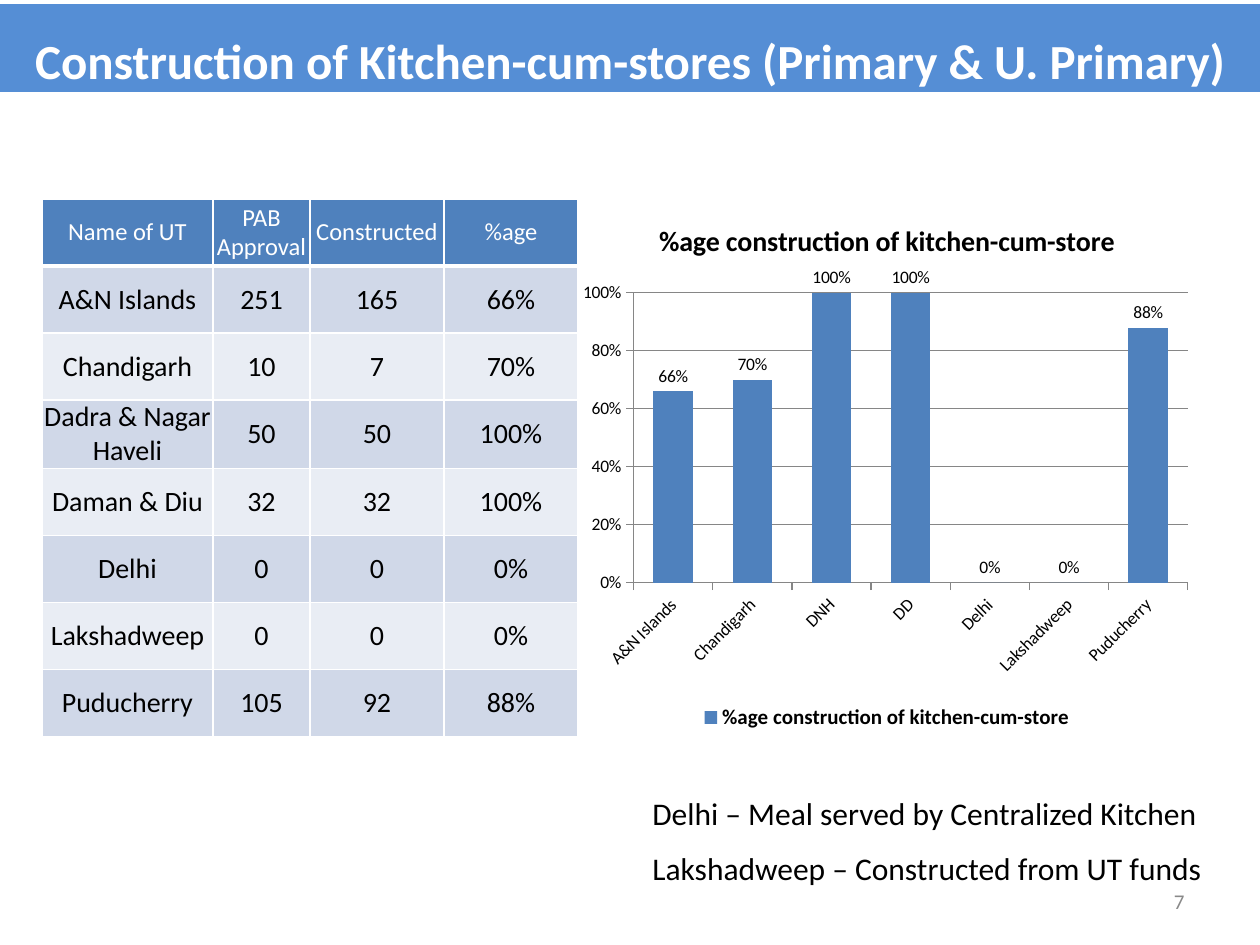
from lxml import etree
from pptx import Presentation
from pptx import util as u
from pptx.chart.data import CategoryChartData
from pptx.dml.color import RGBColor
from pptx.enum import chart as charts, text
from pptx.oxml import parse_xml
from pptx.oxml.ns import nsdecls, qn

SCALE = 914400 / 126  # EMU per px


def px(*lengths):
    return [u.Emu(round(length * SCALE)) for length in lengths]


def style(font, size, color, bold=False):
    font.name, font.size, font.bold = "Calibri", u.Pt(size), bold
    font.color.rgb = RGBColor.from_string(color)


deck = Presentation()
deck.slide_width, deck.slide_height = px(1260, 945)
page = deck.slides.add_slide(deck.slide_layouts[5])

# Title band
title = page.shapes.title
title.left, title.top, title.width, title.height = px(0, 4, 1260, 88)
title.fill.solid()
title.fill.fore_color.rgb = RGBColor.from_string("558ED5")
title.text_frame.text = "Construction of Kitchen-cum-stores (Primary & U. Primary)"
title.text_frame.vertical_anchor = text.MSO_ANCHOR.MIDDLE
title.text_frame.auto_size = text.MSO_AUTO_SIZE.NONE
para = title.text_frame.paragraphs[0]
para.alignment = text.PP_ALIGN.CENTER
para.line_spacing = 1.4
style(para.font, 28, "FFFFFF", True)

# Table of kitchens by territory
rows = [
    ("Name of UT", "PAB Approval", "Constructed", "%age"),
    ("A&N Islands", "251", "165", "66%"),
    ("Chandigarh", "10", "7", "70%"),
    ("Dadra & Nagar Haveli", "50", "50", "100%"),
    ("Daman & Diu", "32", "32", "100%"),
    ("Delhi", "0", "0", "0%"),
    ("Lakshadweep", "0", "0", "0%"),
    ("Puducherry", "105", "92", "88%"),
]
table = page.shapes.add_table(len(rows), 4, *px(42, 199, 536, 536)).table
for column, width in zip(table.columns, px(171, 97, 134, 134)):
    column.width = width
for r, values in enumerate(rows):
    table.rows[r].height = px(67)[0]
    fill = "4F81BD" if r == 0 else ("E9EDF4", "D0D8E8")[r % 2]
    for c, value in enumerate(values):
        cell = table.cell(r, c)
        cell.text = value
        cell.vertical_anchor = text.MSO_ANCHOR.MIDDLE
        cell.margin_left = cell.margin_right = cell.margin_top = cell.margin_bottom = 0
        para = cell.text_frame.paragraphs[0]
        para.alignment = text.PP_ALIGN.CENTER
        style(para.font, 16 if r else 14, "000000" if r else "FFFFFF")
        # White borders, thicker between header and body
        for side in "LRTB":
            thick = (r, side) in ((0, "B"), (1, "T"))
            cell._tc.get_or_add_tcPr().append(parse_xml(
                f'<a:ln{side} {nsdecls("a")} w="{u.Pt(3 if thick else 1)}"><a:solidFill>'
                f'<a:srgbClr val="FFFFFF"/></a:solidFill></a:ln{side}>'))
        cell.fill.solid()
        cell.fill.fore_color.rgb = RGBColor.from_string(fill)

# Column chart
name = "%age construction of kitchen-cum-store"
data = CategoryChartData(number_format="0%")
data.categories = ["A&N Islands", "Chandigarh", "DNH", "DD", "Delhi", "Lakshadweep", "Puducherry"]
data.add_series(name, [0.66, 0.7, 1, 1, 0, 0, 0.88])
chart = page.shapes.add_chart(
    charts.XL_CHART_TYPE.COLUMN_CLUSTERED, *px(567, 199, 640, 536), data).chart
style(chart.font, 10, "000000")
chart.has_title = True
chart.chart_title.text_frame.text = name
style(chart.chart_title.text_frame.paragraphs[0].font, 16, "000000", True)
chart.has_legend = True
chart.legend.position = charts.XL_LEGEND_POSITION.BOTTOM
chart.legend.include_in_layout = False
style(chart.legend.font, 12, "000000", True)

plot = chart.plots[0]
plot.gap_width = 100
plot.vary_by_categories = False
bars = plot.series[0]
bars.format.fill.solid()
bars.format.fill.fore_color.rgb = RGBColor.from_string("4F81BD")
labels = bars.data_labels
labels.show_value = True
labels.number_format, labels.number_format_is_linked = "0%", False
labels.position = charts.XL_LABEL_POSITION.OUTSIDE_END
style(labels.font, 10, "000000")

scale_axis, name_axis = chart.value_axis, chart.category_axis
scale_axis.minimum_scale, scale_axis.maximum_scale, scale_axis.major_unit = 0, 1, 0.2
scale_axis.has_major_gridlines = True
scale_axis.tick_labels.number_format = "0%"
scale_axis.tick_labels.number_format_is_linked = False
for axis in (scale_axis, name_axis):
    axis.major_tick_mark = charts.XL_TICK_MARK.OUTSIDE
    style(axis.tick_labels.font, 10, "000000")
for line in (scale_axis.format.line, name_axis.format.line, scale_axis.major_gridlines.format.line):
    line.color.rgb = RGBColor.from_string("868686")
    line.width = u.Pt(0.75)
name_axis._element.find(qn("c:txPr")).find(qn("a:bodyPr")).set("rot", "-2700000")

# Fixed position of the inner plot area
area = chart._chartSpace.chart.plotArea
for old in area.findall(qn("c:layout")):
    area.remove(old)
layout = parse_xml(f'<c:layout {nsdecls("c")}><c:manualLayout/></c:layout>')
for tag, value in (("layoutTarget", "inner"), ("xMode", "edge"), ("yMode", "edge"),
                   ("x", "0.104"), ("y", "0.175"), ("w", "0.866"), ("h", "0.541")):
    etree.SubElement(layout[0], qn(f"c:{tag}")).set("val", value)
area.insert(0, layout)

# Notes below the chart and the page number
for words, place, size, color, align, wrap in (
    ("Delhi – Meal served by Centralized Kitchen", (640, 788, 578, 50),
     18, "000000", text.PP_ALIGN.LEFT, False),
    ("Lakshadweep – Constructed from UT funds", (640, 843, 588, 50),
     18, "000000", text.PP_ALIGN.LEFT, False),
    ("7", (903, 876, 294, 50), 12, "898989", text.PP_ALIGN.RIGHT, True),
):
    frame = page.shapes.add_textbox(*px(*place)).text_frame
    frame.text = words
    frame.word_wrap = wrap
    frame.vertical_anchor = text.MSO_ANCHOR.MIDDLE if wrap else text.MSO_ANCHOR.TOP
    frame.paragraphs[0].alignment = align
    style(frame.paragraphs[0].font, size, color)

deck.save("out.pptx")
